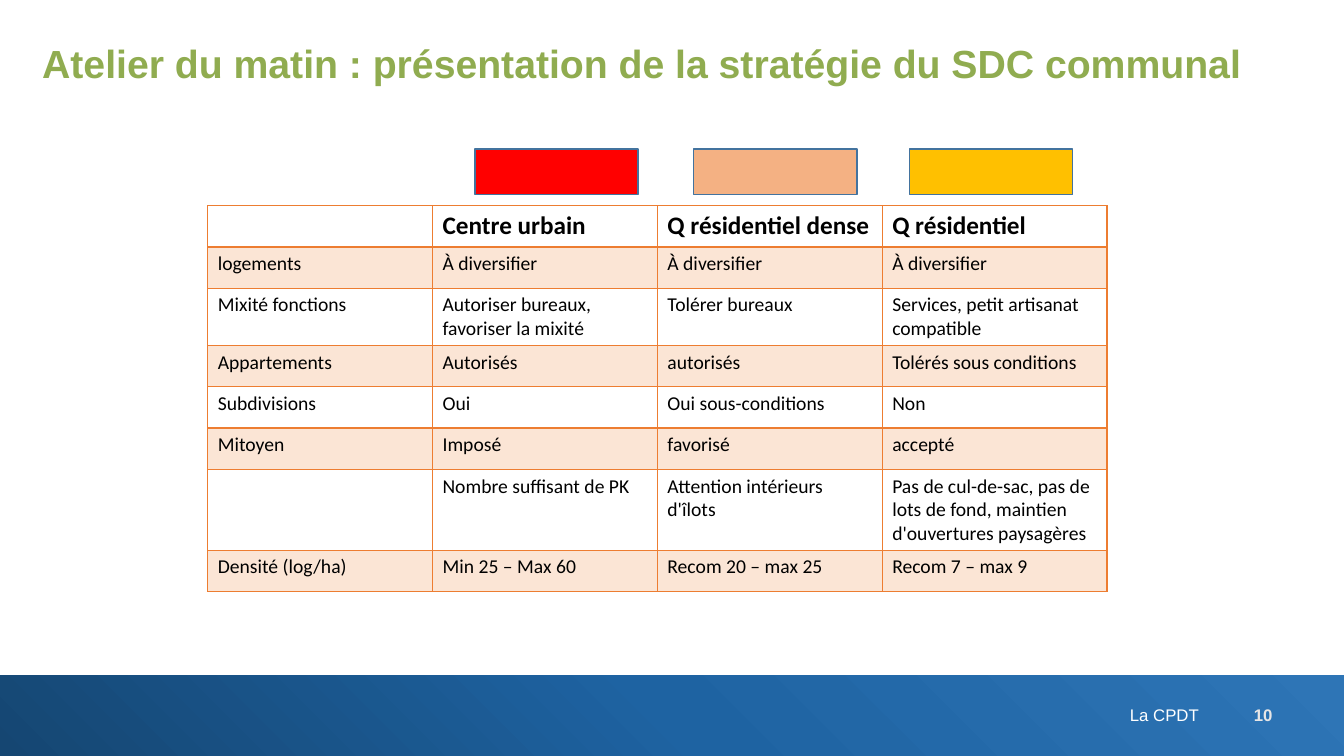
from lxml.etree import SubElement
from pptx import Presentation
from pptx.dml.color import RGBColor
from pptx.enum.shapes import MSO_SHAPE
from pptx.enum.text import MSO_ANCHOR, PP_ALIGN
from pptx.oxml import parse_xml
from pptx.oxml.ns import nsdecls, qn
from pptx.util import Inches, Pt

# Content
TITLE = "Atelier du matin : présentation de la stratégie du SDC communal"
FOOTER = "La CPDT"
NUMBER = "10"
ROWS = [
    ("", "Centre urbain", "Q résidentiel dense", "Q résidentiel"),
    ("logements", "À diversifier", "À diversifier", "À diversifier"),
    ("Mixité fonctions", "Autoriser bureaux, favoriser la mixité",
     "Tolérer bureaux", "Services, petit artisanat compatible"),
    ("Appartements", "Autorisés", "autorisés", "Tolérés sous conditions"),
    ("Subdivisions", "Oui", "Oui sous-conditions", "Non"),
    ("Mitoyen", "Imposé", "favorisé", "accepté"),
    ("", "Nombre suffisant de PK", "Attention intérieurs d'îlots",
     "Pas de cul-de-sac, pas de lots de fond, maintien d'ouvertures paysagères"),
    ("Densité (log/ha)", "Min 25 – Max 60", "Recom 20 – max 25", "Recom 7 – max 9"),
]

# Colours
WHITE = RGBColor(0xFF, 0xFF, 0xFF)
BLACK = RGBColor(0, 0, 0)
GREY = RGBColor(0xE7, 0xE6, 0xE6)
GREEN = RGBColor(0x90, 0xAC, 0x50)
ORANGE = RGBColor(0xED, 0x7D, 0x31)
EDGE = RGBColor(0x43, 0x73, 0x9E)
BLUES = [(0, RGBColor(0x15, 0x46, 0x72)), (50, RGBColor(0x1E, 0x63, 0xA2)),
         (100, RGBColor(0x2E, 0x75, 0xB6))]
KEYS = [(4.71, RGBColor(0xFF, 0, 0)), (6.88, RGBColor(0xF4, 0xB1, 0x83)),
        (9.02, RGBColor(0xFF, 0xC0, 0))]

# Layout in inches
WIDE, HIGH = 13.33, 7.5
BAND_TOP = 6.7
COL, ROW = 2.23, 0.41

deck = Presentation()
deck.slide_width, deck.slide_height = Inches(WIDE), Inches(HIGH)
slide = deck.slides.add_slide(deck.slide_layouts[6])


def style(para, size, color, bold=False, face="Arial"):
    for run in para.runs:
        font = run.font
        font.name, font.size, font.bold = face, Pt(size), bold
        font.color.rgb = color


def add_text(box, text, size, color, bold, align, anchor):
    frame = slide.shapes.add_textbox(*map(Inches, box)).text_frame
    frame.word_wrap = True
    frame.vertical_anchor = anchor
    para = frame.paragraphs[0]
    para.text = text
    para.alignment = align
    style(para, size, color, bold)
    return para


def add_rect(left, top, width, height):
    rect = slide.shapes.add_shape(
        MSO_SHAPE.RECTANGLE, *map(Inches, (left, top, width, height)))
    rect.shadow.inherit = False
    return rect


def set_edge(cell, side, width):
    line = SubElement(cell._tc.get_or_add_tcPr(), qn(f"a:{side}"), w=str(Pt(width)))
    fill = SubElement(line, qn("a:solidFill"))
    SubElement(fill, qn("a:srgbClr"), val=str(ORANGE))


# Footer band
band = add_rect(0, BAND_TOP, WIDE, HIGH - BAND_TOP)
band.line.fill.background()
stops = "".join(f'<a:gs pos="{pos * 1000}"><a:srgbClr val="{color}"/></a:gs>'
                for pos, color in BLUES)
band.fill.background()
blank = band._element.spPr.find(qn("a:noFill"))
blank.getparent().replace(blank, parse_xml(
    f'<a:gradFill {nsdecls("a")}><a:gsLst>{stops}</a:gsLst>'
    f'<a:lin ang="{315 * 60000}" scaled="1"/></a:gradFill>'))
add_text((8.29, 6.94, 3.7, 0.3), FOOTER, 12, WHITE, False,
         PP_ALIGN.RIGHT, MSO_ANCHOR.MIDDLE)
add_text((11.98, 6.94, 0.74, 0.3), NUMBER, 12, GREY, True,
         PP_ALIGN.RIGHT, MSO_ANCHOR.MIDDLE)

# Title
title = add_text((0.32, 0.39, 12.68, 0.9), TITLE, 28, GREEN, True,
                 PP_ALIGN.LEFT, MSO_ANCHOR.TOP)
title.line_spacing = 0.9

# Table
count, span = len(ROWS), len(ROWS[0])
table = slide.shapes.add_table(
    count, span, Inches(2.06), Inches(2.04),
    Inches(COL * span), Inches(ROW * count)).table
table.first_row = table.horz_banding = False
for col in table.columns:
    col.width = Inches(COL)
for r, row in enumerate(ROWS):
    table.rows[r].height = Inches(ROW)
    head = r == 0
    for c, text in enumerate(row):
        cell = table.cell(r, c)
        cell.text = text
        style(cell.text_frame.paragraphs[0], 18 if head else 14, BLACK, head, "Calibri")
        for side in ("lnL", "lnR", "lnT", "lnB"):
            thick = (r, side) in ((0, "lnB"), (1, "lnT"))
            set_edge(cell, side, 2 if thick else 1)
        if r % 2:
            cell.fill.solid()
            cell.fill.fore_color.rgb = ORANGE
            tint = cell._tc.tcPr.find(qn("a:solidFill"))[0]
            SubElement(tint, qn("a:alpha"), val="20000")
        else:
            cell.fill.background()

# Colour keys above the columns
for left, color in KEYS:
    key = add_rect(left, 1.48, 1.62, 0.45)
    key.fill.solid()
    key.fill.fore_color.rgb = color
    key.line.color.rgb = EDGE
    key.line.width = Pt(1)

deck.save("out.pptx")
